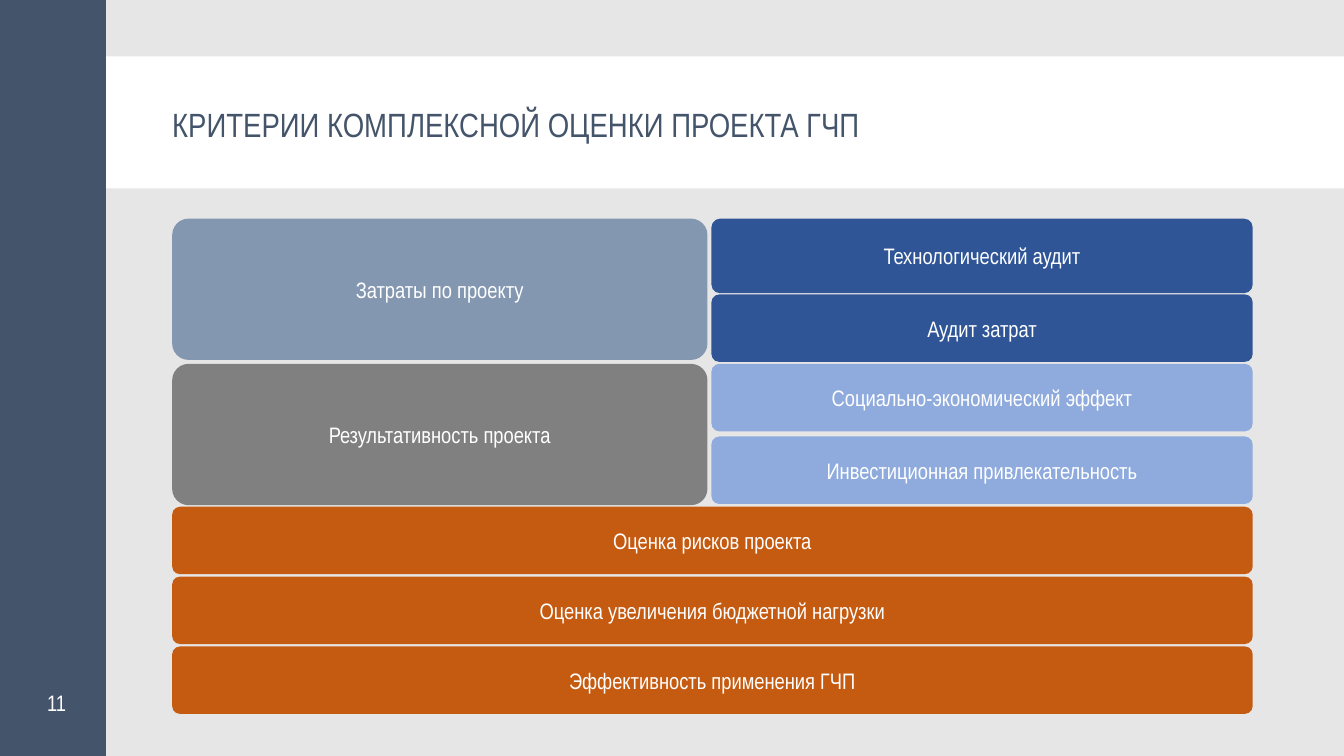
from pptx import Presentation
from pptx.dml.color import RGBColor
from pptx.enum.shapes import MSO_SHAPE as Shape
from pptx.enum.text import MSO_ANCHOR as Anchor, MSO_AUTO_SIZE as AutoSize, PP_ALIGN as Align
from pptx.util import Cm, Pt

FONT = "Arial Narrow"
WHITE = RGBColor(0xFF, 0xFF, 0xFF)
LIGHT_GREY = RGBColor(0xE7, 0xE6, 0xE6)
NAVY = RGBColor(0x44, 0x54, 0x6A)
STEEL = RGBColor(0x84, 0x97, 0xB0)
GREY = RGBColor(0x80, 0x80, 0x80)
BLUE = RGBColor(0x2F, 0x55, 0x97)
SKY = RGBColor(0x8F, 0xAA, 0xDC)
ORANGE = RGBColor(0xC5, 0x5A, 0x11)

# Content
HEADING = "КРИТЕРИИ КОМПЛЕКСНОЙ ОЦЕНКИ ПРОЕКТА ГЧП"
PAGE_NUMBER = "11"
GROUPS = [("Затраты по проекту", STEEL), ("Результативность проекта", GREY)]
# Criterion, colour, top and height in cm
CRITERIA = [
    ("Технологический аудит", BLUE, 5.51, 1.88),
    ("Аудит затрат", BLUE, 7.42, 1.7),
    ("Социально-экономический эффект", SKY, 9.17, 1.7),
    ("Инвестиционная привлекательность", SKY, 11, 1.7),
]
OVERALL = [
    "Оценка рисков проекта",
    "Оценка увеличения бюджетной нагрузки",
    "Эффективность применения ГЧП",
]

# Layout in cm
SLIDE_W, SLIDE_H = 33.87, 19.05
LEFT, RIGHT = 4.34, 31.57
GROUP_TOP, GROUP_W, GROUP_H, GROUP_PITCH = 5.51, 13.49, 3.56, 3.66
CRITERIA_LEFT = 17.93
OVERALL_TOP, OVERALL_H, OVERALL_PITCH = 12.77, 1.7, 1.76

deck = Presentation()
deck.slide_width, deck.slide_height = Cm(SLIDE_W), Cm(SLIDE_H)
slide = deck.slides.add_slide(deck.slide_layouts[5])
slide.background.fill.solid()
slide.background.fill.fore_color.rgb = LIGHT_GREY


def add_panel(kind, left, top, width, height, color):
    panel = slide.shapes.add_shape(kind, Cm(left), Cm(top), Cm(width), Cm(height))
    panel.shadow.inherit = False
    panel.fill.solid()
    panel.fill.fore_color.rgb = color
    panel.line.fill.background()
    return panel


def write(shape, text, size, color, align, anchor):
    frame = shape.text_frame
    frame.word_wrap = True
    frame.auto_size = AutoSize.NONE
    frame.vertical_anchor = anchor
    frame.text = text
    paragraph = frame.paragraphs[0]
    paragraph.alignment = align
    paragraph.font.name = FONT
    paragraph.font.size = Pt(size)
    paragraph.font.color.rgb = color


def remove_margins(shape):
    frame = shape.text_frame
    frame.margin_left = frame.margin_right = frame.margin_top = frame.margin_bottom = 0


def add_block(text, left, top, width, height, color):
    block = add_panel(Shape.ROUNDED_RECTANGLE, left, top, width, height, color)
    block.adjustments[0] = 0.116
    write(block, text, 16, WHITE, Align.CENTER, Anchor.MIDDLE)


# Title on its white band
band = add_panel(Shape.RECTANGLE, 0, 1.42, SLIDE_W, 3.33, WHITE)
title = slide.shapes.title
band.element.addnext(title.element)
title.left, title.top, title.width, title.height = Cm(LEFT), Cm(2.01), Cm(22.91), Cm(2.24)
write(title, HEADING, 24, NAVY, Align.LEFT, Anchor.MIDDLE)
remove_margins(title)

# Side bar with the page number
add_panel(Shape.RECTANGLE, 0, 0, 2.67, SLIDE_H, NAVY)
page = slide.shapes.add_textbox(Cm(1.19), Cm(17.02), Cm(7.62), Cm(1.02))
write(page, PAGE_NUMBER, 16, WHITE, Align.LEFT, Anchor.BOTTOM)
remove_margins(page)

# Groups on the left, their criteria on the right
for row, (text, color) in enumerate(GROUPS):
    add_block(text, LEFT, GROUP_TOP + row * GROUP_PITCH, GROUP_W, GROUP_H, color)
for text, color, top, height in CRITERIA:
    add_block(text, CRITERIA_LEFT, top, RIGHT - CRITERIA_LEFT, height, color)

# Overall criteria across the full width
for row, text in enumerate(OVERALL):
    add_block(text, LEFT, OVERALL_TOP + row * OVERALL_PITCH, RIGHT - LEFT, OVERALL_H, ORANGE)

deck.save("out.pptx")
